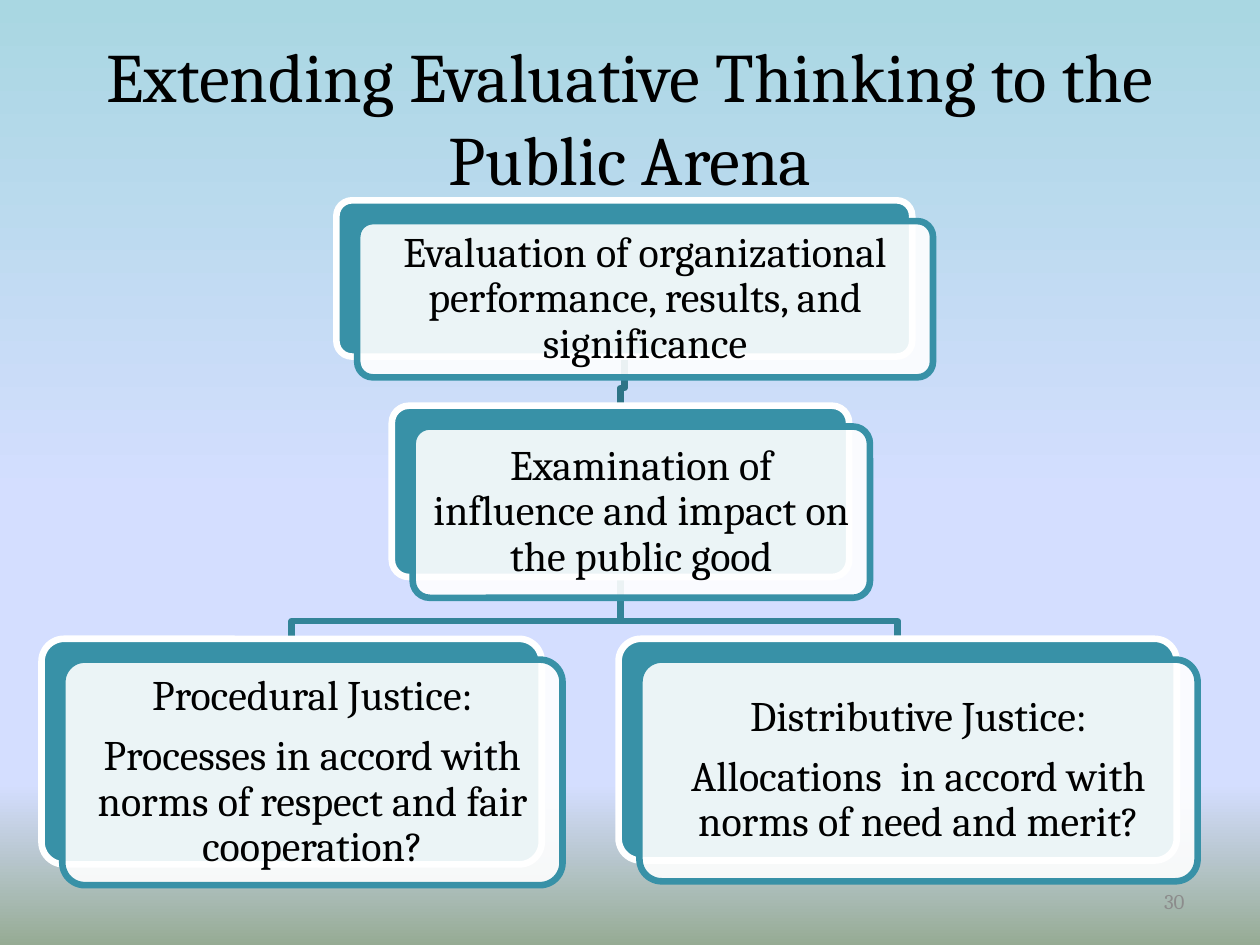
from lxml import etree
from pptx import Presentation
from pptx.dml.color import RGBColor
from pptx.enum import shapes, text
from pptx.oxml import ns
from pptx.util import Inches, Pt

TEAL, WHITE, BLACK = "3891A7", "FFFFFF", "000000"
FONT = "Cambria"
SHIFT = 0.165
BEND = 0.14
EDGE = 3.78


def color(code):
    return RGBColor.from_string(code)


def paint(slide, stops):
    slide.background.fill.gradient()
    grad = slide.element.find(".//" + ns.qn("a:gradFill"))
    for child in list(grad):
        grad.remove(child)
    group = etree.SubElement(grad, ns.qn("a:gsLst"))
    for place, code in stops:
        stop = etree.SubElement(group, ns.qn("a:gs"), pos=str(place * 1000))
        etree.SubElement(stop, ns.qn("a:srgbClr"), val=code)
    etree.SubElement(grad, ns.qn("a:lin"), ang="5400000", scaled="0")


def write(shape, lines, size, code, align, inset=(0.1, 0.05), line=None, after=0):
    frame = shape.text_frame
    frame.word_wrap = True
    frame.vertical_anchor = text.MSO_ANCHOR.MIDDLE
    frame.margin_left = frame.margin_right = Inches(inset[0])
    frame.margin_top = frame.margin_bottom = Inches(inset[1])
    frame.text = "\n".join(lines)
    for para in frame.paragraphs:
        para.alignment = align
        para.line_spacing = line
        para.space_after = Pt(after)
        para.font.size = Pt(size)
        para.font.name = FONT
        para.font.color.rgb = color(code)


def label(slide, box, words, size, code, align):
    shape = slide.shapes.add_textbox(*map(Inches, box))
    write(shape, [words], size, code, align)


def panel(slide, box, fill, edge):
    shape = slide.shapes.add_shape(
        shapes.MSO_SHAPE.ROUNDED_RECTANGLE, *map(Inches, box))
    shape.adjustments[0] = 0.1
    shape.shadow.inherit = False
    shape.fill.solid()
    shape.fill.fore_color.rgb = color(fill)
    shape.line.color.rgb = color(edge)
    shape.line.width = Pt(EDGE)
    return shape


def card(slide, box, lines):
    left, top, width, height = box
    panel(slide, box, TEAL, WHITE)
    front = panel(slide, (left + SHIFT, top + SHIFT, width, height), WHITE, TEAL)
    tint = front.fill.fore_color._xFill.find(ns.qn("a:srgbClr")) \
        if hasattr(front.fill.fore_color, "_xFill") \
        else front.element.spPr.find(ns.qn("a:solidFill"))[0]
    etree.SubElement(tint, ns.qn("a:alpha"), val="90000")
    write(front, lines, 24, BLACK, text.PP_ALIGN.CENTER, (0.06, 0.06), 0.9, 8.4)


def link(slide, upper, lower, code):
    start = upper[0] + upper[2] / 2
    end = lower[0] + lower[2] / 2
    bend = lower[1] - BEND
    points = [(start, bend), (end, bend), (end, lower[1])]
    pen = slide.shapes.build_freeform(
        Inches(start), Inches(upper[1] + upper[3]))
    pen.add_line_segments(
        [(Inches(x), Inches(y)) for x, y in points], close=False)
    shape = pen.convert_to_shape()
    shape.shadow.inherit = False
    shape.fill.background()
    shape.line.color.rgb = color(code)
    shape.line.width = Pt(EDGE)


def tree(slide, cards, links):
    for upper, lower, code in links:
        link(slide, cards[upper][0], cards[lower][0], code)
    for box, lines in cards.values():
        card(slide, box, lines)


def main():
    deck = Presentation()
    deck.slide_width, deck.slide_height = Inches(10), Inches(7.5)
    slide = deck.slides.add_slide(deck.slide_layouts[6])
    paint(slide, [(0, "A9D7E2"), (53, "D4DEFF"), (83, "D4DEFF"), (100, "96AB94")])
    label(slide, (0.5, 0.3, 9, 1.25),
          "Extending Evaluative Thinking to the Public Arena",
          39.6, BLACK, text.PP_ALIGN.CENTER)
    cards = {
        "results": ((2.67, 1.59, 4.57, 1.24), [
            "Evaluation of organizational performance, results, and significance"]),
        "impact": ((3.11, 3.22, 3.63, 1.36), [
            "Examination of influence and impact on the public good"]),
        "process": ((0.33, 5.07, 3.97, 1.79), [
            "Procedural Justice:",
            "Processes in accord with norms of respect and fair cooperation?"]),
        "share": ((4.91, 5.07, 4.43, 1.76), [
            "Distributive Justice:",
            "Allocations  in accord with norms of need and merit?"]),
    }
    tree(slide, cards, [
        ("impact", "share", "338498"),
        ("impact", "process", "338498"),
        ("results", "impact", "2D7486"),
    ])
    label(slide, (7.17, 6.95, 2.33, 0.4), "30", 12, "8C8C8C", text.PP_ALIGN.RIGHT)
    deck.save("out.pptx")


if __name__ == "__main__":
    main()
